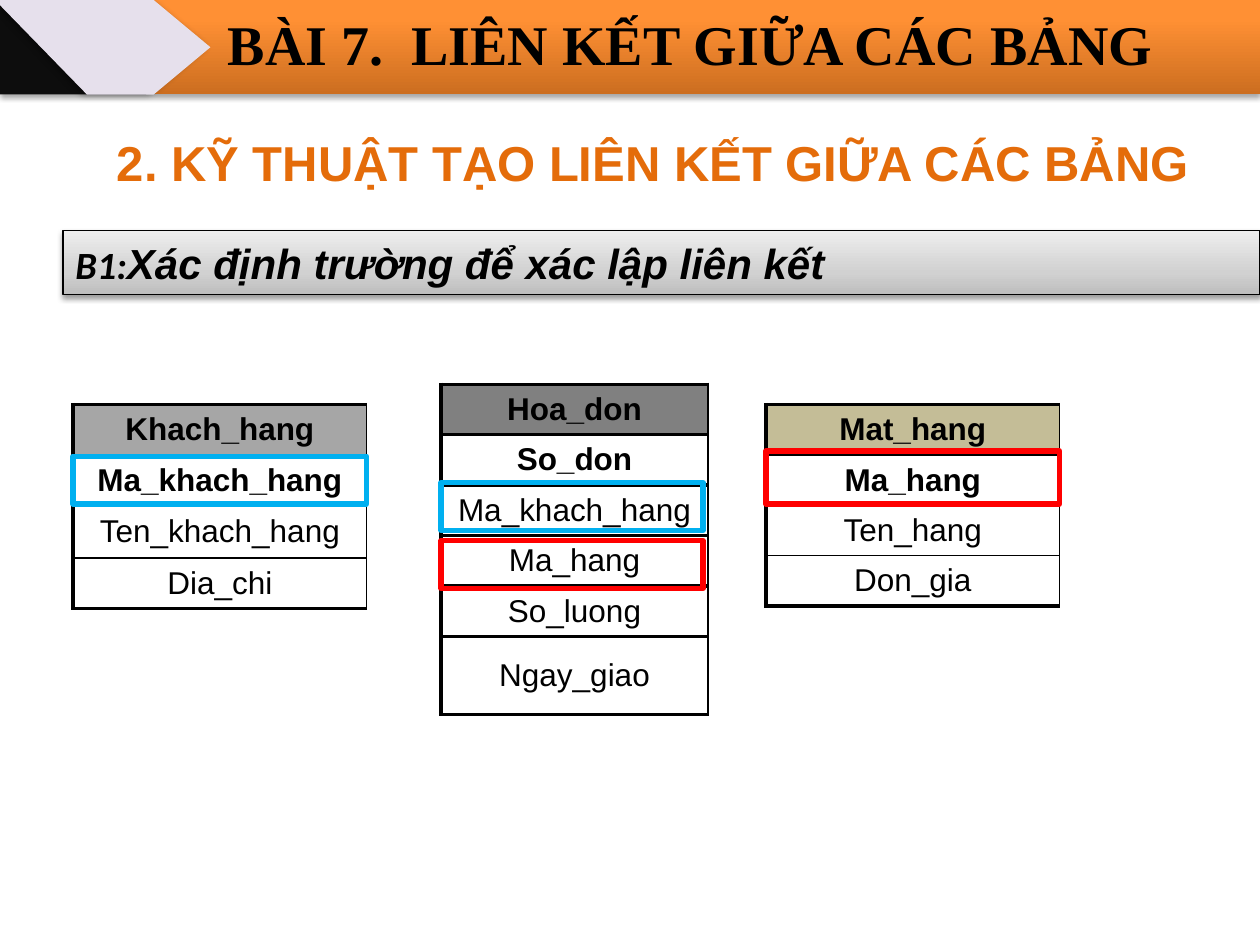
from lxml import etree
from pptx import Presentation
from pptx.dml.color import RGBColor
from pptx.enum.shapes import MSO_SHAPE
from pptx.enum.text import MSO_ANCHOR, PP_ALIGN
from pptx.oxml.ns import qn
from pptx.util import Inches, Pt

RECT = MSO_SHAPE.RECTANGLE
MIDDLE = MSO_ANCHOR.MIDDLE
CENTER, LEFT = PP_ALIGN.CENTER, PP_ALIGN.LEFT
BLACK, BLUE, RED = "000000", "00B0F0", "FF0000"
THIN, THICK = 1, 2.25


def color(hex_value):
    return RGBColor.from_string(hex_value)


def style_font(font, name, size, hex_value=BLACK, bold=True, italic=None):
    font.name, font.size = name, Pt(size)
    font.bold, font.italic = bold, italic
    font.color.rgb = color(hex_value)


def child(parent, tag, **attributes):
    return etree.SubElement(parent, qn(tag), attributes)


def add_color(parent, hex_value):
    return child(parent, "a:srgbClr", val=hex_value)


def add_rect(slide, box):
    shape = slide.shapes.add_shape(RECT, *map(Inches, box))
    shape.shadow.inherit = False
    shape.line.fill.background()
    return shape


def fill_upward(shape, stops):
    """Gradient running from the bottom edge to the top one."""
    shape.fill.gradient()
    shape.fill.gradient_angle = 90
    stop_list = shape._element.spPr.find(".//" + qn("a:gsLst"))
    for old_stop in list(stop_list):
        stop_list.remove(old_stop)
    for percent, hex_value in stops:
        add_color(child(stop_list, "a:gs", pos=str(percent * 1000)), hex_value)


def cast_shadow(shape, alpha, blur, distance, angle):
    shape.shadow.inherit = False
    effects = shape._element.spPr.find(qn("a:effectLst"))
    shadow = child(effects, "a:outerShdw", blurRad=str(Pt(blur)), dist=str(Pt(distance)),
                   dir=str(angle * 60000), rotWithShape="0")
    child(add_color(shadow, BLACK), "a:alpha", val=str(alpha * 1000))


def add_text(slide, box, text, name, size, hex_value, align):
    frame = slide.shapes.add_textbox(*map(Inches, box)).text_frame
    frame.word_wrap = True
    paragraph = frame.paragraphs[0]
    paragraph.text, paragraph.alignment = text, align
    style_font(paragraph.font, name, size, hex_value)


def add_banner(slide, box):
    left, top, width, height = box
    bar = add_rect(slide, box)
    fill_upward(bar, [(0, "CC6E20"), (80, "FF9034"), (100, "FF9136")])
    cast_shadow(bar, 35, 3.1, 1.8, 90)

    corner = add_rect(slide, (left, top + 0.04, 1.16, height - 0.04))
    corner.fill.solid()
    corner.fill.fore_color.rgb = color("0D0D0D")

    add_text(slide, (left + 1.02, top + 0.03, width - 1.08, 0.63),
             "BÀI 7.  LIÊN KẾT GIỮA CÁC BẢNG", "Times New Roman", 32, BLACK, CENTER)

    # Pale arrow over the dark corner
    outline = [(-0.04, 0), (0.69, height), (1.22, height), (1.67, height / 2), (1.22, 0)]
    points = [(Inches(left + x), Inches(top + y)) for x, y in outline]
    builder = slide.shapes.build_freeform(*points[0])
    builder.add_line_segments(points[1:], close=True)
    arrow = builder.convert_to_shape()
    arrow.fill.solid()
    arrow.fill.fore_color.rgb = color("E6E0EC")
    arrow.line.fill.background()
    cast_shadow(arrow, 40, 4, 3, 180)


def add_step(slide, box):
    step = add_rect(slide, box)
    fill_upward(step, [(0, "BDBDBD"), (35, "D1D1D1"), (100, "EEEEEE")])
    step.line.color.rgb = color(BLACK)
    step.line.width = Pt(0.75)
    cast_shadow(step, 38, 3.1, 1.6, 90)
    step.text_frame.vertical_anchor = MIDDLE
    paragraph = step.text_frame.paragraphs[0]
    paragraph.alignment = LEFT
    for text, name, size in [("B1:", "Calibri", 22),
                             ("Xác định trường để xác lập liên kết", "Arial", 24)]:
        run = paragraph.add_run()
        run.text = text
        style_font(run.font, name, size, italic=True)


def set_borders(cell, top, bottom):
    properties = cell._tc.get_or_add_tcPr()
    for side, width in zip("LRTB", (THICK, THIN, top, bottom)):
        line = child(properties, f"a:ln{side}", w=str(Pt(width)))
        add_color(child(line, "a:solidFill"), BLACK)


def add_fields(slide, box, heights, header_fill, inner_line, fields):
    """One database table: its name, its key in bold, then the other fields."""
    left, top, width = box
    table = slide.shapes.add_table(len(fields), 1, Inches(left), Inches(top),
                                   Inches(width), Inches(sum(heights))).table
    last = len(fields) - 1
    for i, (field, height) in enumerate(zip(fields, heights)):
        table.rows[i].height = Inches(height)
        cell = table.cell(i, 0)
        set_borders(cell, THICK if i == 0 else inner_line, THICK if i == last else inner_line)
        if i == 0:
            cell.fill.solid()
            cell.fill.fore_color.rgb = color(header_fill)
        else:
            cell.fill.background()
        cell.vertical_anchor = MIDDLE
        cell.text = field
        paragraph = cell.text_frame.paragraphs[0]
        paragraph.alignment = CENTER
        style_font(paragraph.font, "Arial", 18, bold=i < 2)


def add_highlight(slide, box, hex_value):
    frame = add_rect(slide, box)
    frame.fill.background()
    frame.line.color.rgb = color(hex_value)
    frame.line.width = Pt(3)


def main():
    deck = Presentation()
    deck.slide_width, deck.slide_height = Inches(10), Inches(7.5)
    slide = deck.slides.add_slide(deck.slide_layouts[6])

    # Database tables
    add_fields(slide, (0.58, 3.21, 2.33), [0.4, 0.4, 0.42, 0.4], "A6A6A6", THIN,
               ["Khach_hang", "Ma_khach_hang", "Ten_khach_hang", "Dia_chi"])
    add_fields(slide, (6.08, 3.21, 2.33), [0.4] * 4, "C4BD97", THIN,
               ["Mat_hang", "Ma_hang", "Ten_hang", "Don_gia"])
    add_fields(slide, (3.5, 3.05, 2.12), [0.4] * 5 + [0.62], "808080", THICK,
               ["Hoa_don", "So_don", "Ma_khach_hang", "Ma_hang", "So_luong", "Ngay_giao"])

    # Section heading and step
    add_text(slide, (0.83, 1, 9.58, 0.57), "2. KỸ THUẬT TẠO LIÊN KẾT GIỮA CÁC BẢNG",
             "Arial", 28, "E46C0A", LEFT)
    add_step(slide, (0.5, 1.83, 9.5, 0.51))

    # Matching fields share a colour
    for box, hex_value in [((0.58, 3.62, 2.33, 0.38), BLUE),
                           ((3.5, 3.83, 2.08, 0.38), BLUE),
                           ((3.5, 4.29, 2.08, 0.38), RED),
                           ((6.08, 3.58, 2.33, 0.42), RED)]:
        add_highlight(slide, box, hex_value)

    add_banner(slide, (0, 0, 10, 0.75))
    deck.save("out.pptx")


if __name__ == "__main__":
    main()
